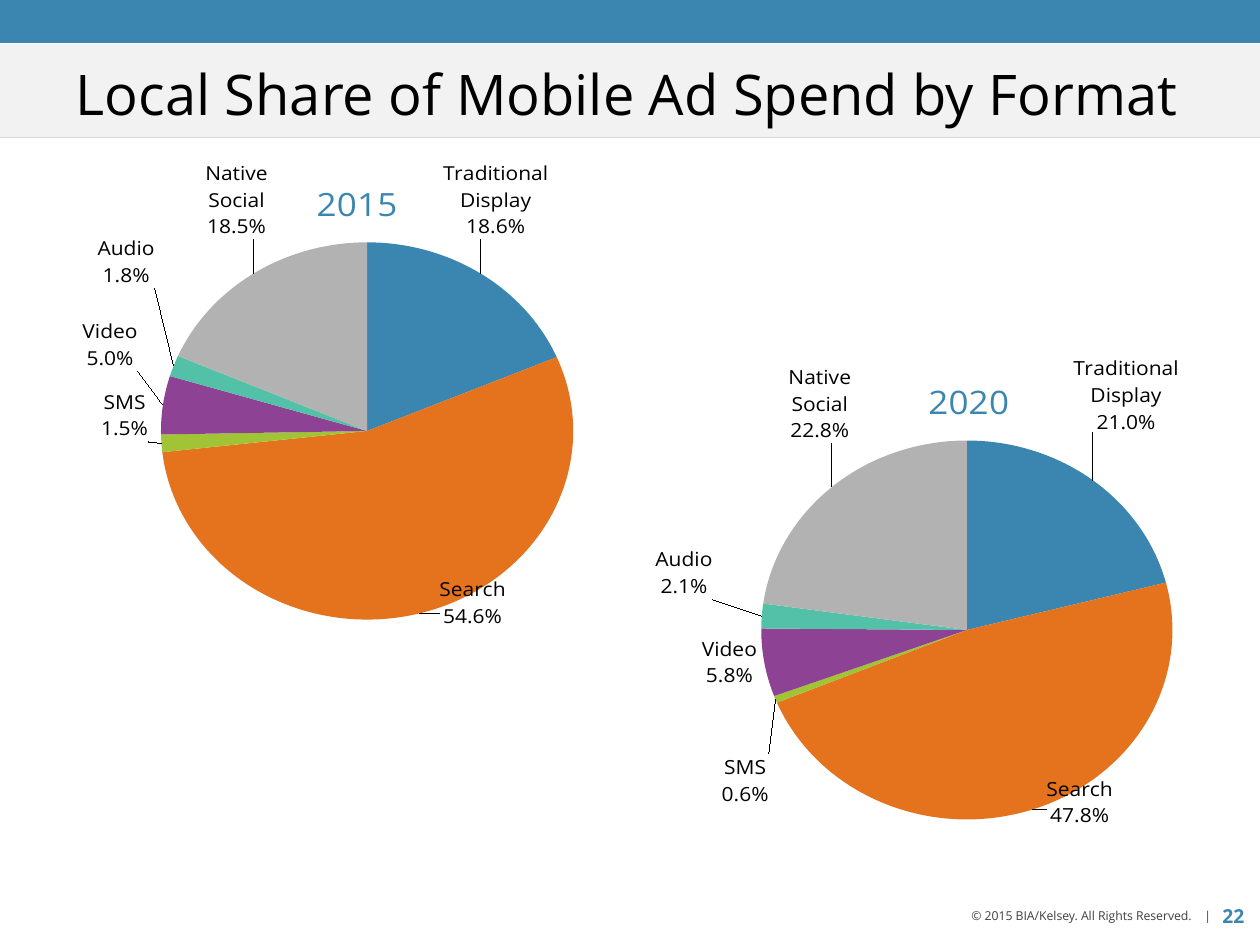
from pptx import Presentation
from pptx.chart.data import CategoryChartData
from pptx.dml.color import RGBColor
from pptx.enum.chart import XL_CHART_TYPE, XL_LABEL_POSITION
from pptx.enum.shapes import MSO_CONNECTOR, MSO_SHAPE
from pptx.enum.text import MSO_ANCHOR, PP_ALIGN
from pptx.oxml import parse_xml
from pptx.oxml.ns import nsdecls
from pptx.util import Inches, Pt

PIE = XL_CHART_TYPE.PIE
OUTSIDE_END = XL_LABEL_POSITION.OUTSIDE_END
RECTANGLE = MSO_SHAPE.RECTANGLE
STRAIGHT = MSO_CONNECTOR.STRAIGHT
MIDDLE = MSO_ANCHOR.MIDDLE
LEFT, CENTER, RIGHT = PP_ALIGN.LEFT, PP_ALIGN.CENTER, PP_ALIGN.RIGHT

FONT = "Open Sans"
BLUE = "3B86B0"
BLACK = "000000"
SLICE_COLORS = [BLUE, "E5731D", "A1C436", "8E4294", "53C1A7", "B2B2B2"]
CATEGORIES = ["Traditional Display", "Search", "SMS", "Video", "Audio", "Native/ Social"]

# Label offsets are fractions of the chart size, measured from the outside end.
PIES = [
    {
        "year": "2015", "box": (0.42, 1.25, 4.75, 4.09),
        "title_at": (0.43, 0.03), "plot": (0.12, 0.18, 0.81, 0.8),
        "values": [18.6, 54.6, 1.5, 5.0, 1.8, 18.5],
        "offsets": [(-0.07, -0.06), (0.03, -0.08), (-0.01, -0.06),
                    (-0.03, -0.07), (-0.02, -0.16), (0.03, -0.06)],
    },
    {
        "year": "2020", "box": (5.18, 2.82, 4.75, 4.08),
        "title_at": (0.45, 0.03), "plot": (0.12, 0.18, 0.81, 0.8),
        "values": [21.0, 47.8, 0.6, 5.8, 2.1, 22.8],
        "offsets": [(-0.04, -0.09), (0.02, -0.06), (0, 0.11),
                    (0, -0.06), (-0.07, -0.09), (0.04, -0.08)],
    },
]


def color(value):
    return RGBColor.from_string(value)


def style(font, size, value, bold=False):
    font.name, font.size, font.bold = FONT, Pt(size), bold
    font.color.rgb = color(value)


presentation = Presentation()
presentation.slide_width, presentation.slide_height = Inches(10), Inches(7.5)
slide = presentation.slides.add_slide(presentation.slide_layouts[5])
title = slide.shapes.title

# Header bands and rule
for top, height, fill in [(0.35, 0.74, "F2F2F2"), (0, 0.34, BLUE)]:
    band = slide.shapes.add_shape(RECTANGLE, 0, Inches(top), Inches(10), Inches(height))
    band.shadow.inherit = False
    band.fill.solid()
    band.fill.fore_color.rgb = color(fill)
    band.line.fill.background()
rule = slide.shapes.add_connector(STRAIGHT, 0, Inches(1.09), Inches(10), Inches(1.09))
rule.line.color.rgb = color("D9D9D9")
rule.line.width = Pt(0.5)
rule._element.spPr.append(parse_xml(f"<a:effectLst {nsdecls('a')}/>"))

# Title, brought in front of the bands
slide.shapes._spTree.append(title._element)
title.left, title.top, title.width, title.height = map(Inches, (0.5, 0.15, 9.16, 1.25))
title.text_frame.text = "Local Share of Mobile Ad Spend by Format"
title.text_frame.vertical_anchor = MIDDLE
title_paragraph = title.text_frame.paragraphs[0]
title_paragraph.alignment = LEFT
title_paragraph.line_spacing = 0.9
style(title_paragraph.runs[0].font, 32, BLACK)

# Footer
footers = [
    ("22", (9.65, 7.2, 0.28, 0.13), CENTER, 11, BLUE, True, 0),
    ("© 2015 BIA/Kelsey. All Rights Reserved.    |", (6.94, 7.16, 2.77, 0.22),
     RIGHT, 7, "3F3F3F", False, 0.1),
]
for text, box, alignment, size, text_color, bold, inset in footers:
    footer = slide.shapes.add_textbox(*map(Inches, box))
    frame = footer.text_frame
    frame.word_wrap = True
    frame.vertical_anchor = MIDDLE
    frame.margin_left = frame.margin_right = Inches(inset)
    frame.margin_top = frame.margin_bottom = Inches(inset / 2)
    frame.text = text
    frame.paragraphs[0].alignment = alignment
    style(frame.paragraphs[0].runs[0].font, size, text_color, bold)

# Pie charts
for pie in PIES:
    data = CategoryChartData()
    data.categories = CATEGORIES
    data.add_series("Series 1", pie["values"])
    chart = slide.shapes.add_chart(PIE, *map(Inches, pie["box"]), data).chart
    chart.has_legend = False
    chart.font.name, chart.font.size = "Lato", Pt(12)
    chart.font.color.rgb = color(BLACK)
    chart.has_title = True
    chart.chart_title.text_frame.text = pie["year"]
    style(chart.chart_title.text_frame.paragraphs[0].runs[0].font, 20, BLUE)

    plot = chart.plots[0]
    plot.vary_by_categories = True
    series = plot.series[0]
    labels = series.data_labels
    labels.show_category_name = labels.show_percentage = True
    labels.show_value = False
    labels.number_format, labels.number_format_is_linked = "0.0%", False
    labels.position = OUTSIDE_END
    style(labels.font, 12, BLACK)

    for index, (fill, (x, y)) in enumerate(zip(SLICE_COLORS, pie["offsets"])):
        point = series.points[index]
        point.format.fill.solid()
        point.format.fill.fore_color.rgb = color(fill)
        point.format.line.fill.background()
        labels._element.insert(index, parse_xml(
            f'<c:dLbl {nsdecls("c")}><c:idx val="{index}"/>'
            f'<c:layout><c:manualLayout><c:x val="{x}"/><c:y val="{y}"/></c:manualLayout></c:layout>'
            '<c:numFmt formatCode="0.0%" sourceLinked="0"/><c:dLblPos val="outEnd"/>'
            '<c:showLegendKey val="0"/><c:showVal val="0"/><c:showCatName val="1"/>'
            '<c:showSerName val="0"/><c:showPercent val="1"/><c:showBubbleSize val="0"/>'
            '<c:separator>\n</c:separator></c:dLbl>'))
        style(point.data_label.font, 12, BLACK)

    social_frame = series.points[5].data_label.text_frame
    social_frame.text = f"Native Social\n{pie['values'][5]}%"
    for paragraph in social_frame.paragraphs:
        style(paragraph.runs[0].font, 12, BLACK)

    # Fixed places of the chart title and the plot area
    title_x, title_y = pie["title_at"]
    plot_x, plot_y, plot_width, plot_height = pie["plot"]
    title_element = chart.chart_title._element
    plot_area = chart._chartSpace.chart.plotArea
    for parent in (title_element, plot_area):
        for automatic_layout in parent.xpath("c:layout"):
            parent.remove(automatic_layout)
    title_element.xpath("c:tx")[0].addnext(parse_xml(
        f'<c:layout {nsdecls("c")}><c:manualLayout>'
        '<c:xMode val="edge"/><c:yMode val="edge"/>'
        f'<c:x val="{title_x}"/><c:y val="{title_y}"/></c:manualLayout></c:layout>'))
    plot_area.insert(0, parse_xml(
        f'<c:layout {nsdecls("c")}><c:manualLayout><c:layoutTarget val="inner"/>'
        '<c:xMode val="edge"/><c:yMode val="edge"/>'
        f'<c:x val="{plot_x}"/><c:y val="{plot_y}"/>'
        f'<c:w val="{plot_width}"/><c:h val="{plot_height}"/></c:manualLayout></c:layout>'))

presentation.save("out.pptx")
